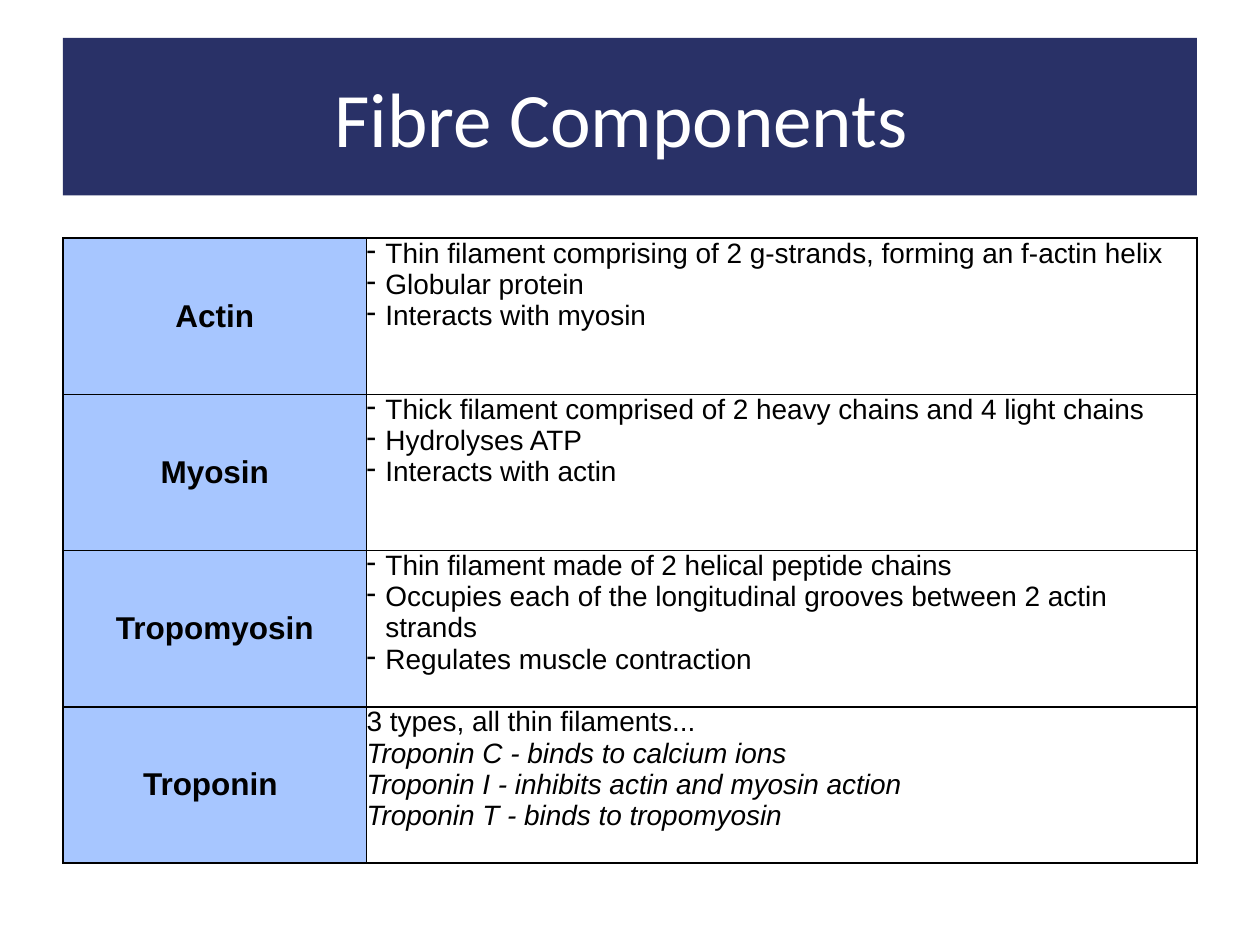
"""Builds a slide with a table of muscle fibre components."""
from dataclasses import dataclass
from typing import Any

from lxml import etree
from pptx import Presentation
from pptx.dml.color import RGBColor
from pptx.enum import shapes, text
from pptx.oxml import ns
from pptx.util import Pt

NAVY = RGBColor(0x29, 0x31, 0x67)
SKY = RGBColor(0xA7, 0xC6, 0xFF)
BLACK = RGBColor(0, 0, 0)
WHITE = RGBColor(0xFF, 0xFF, 0xFF)

LEFT, WIDTH = 36, 648
COLUMN_WIDTHS = (173.5, 474.5)
ROW_HEIGHT = 89.28
HANGING_INDENT = 10.8


@dataclass(frozen=True)
class Line:
    wording: str
    bulleted: bool = True
    italic: bool = False


@dataclass(frozen=True)
class Component:
    name: str
    facts: tuple[Line, ...]


COMPONENTS = (
    Component("Actin", (
        Line("Thin filament comprising of 2 g-strands, forming an f-actin helix"),
        Line("Globular protein"),
        Line("Interacts with myosin"),
    )),
    Component("Myosin", (
        Line("Thick filament comprised of 2 heavy chains and 4 light chains"),
        Line("Hydrolyses ATP"),
        Line("Interacts with actin"),
    )),
    Component("Tropomyosin", (
        Line("Thin filament made of 2 helical peptide chains"),
        Line("Occupies each of the longitudinal grooves between 2 actin strands"),
        Line("Regulates muscle contraction"),
    )),
    Component("Troponin ", (
        Line("3 types, all thin filaments...", bulleted=False),
        Line("Troponin C - binds to calcium ions", bulleted=False, italic=True),
        Line("Troponin I - inhibits actin and myosin action", bulleted=False, italic=True),
        Line("Troponin T - binds to tropomyosin", bulleted=False, italic=True),
    )),
)


def write(paragraph: Any, wording: str, *, size: float, font: str = "Arial",
          color: RGBColor = BLACK, bold: bool = False, italic: bool = False,
          centred: bool = False, bulleted: bool = False) -> None:
    run = paragraph.add_run()
    run.text = wording
    run.font.name, run.font.size = font, Pt(size)
    run.font.bold, run.font.italic = bold, italic
    run.font.color.rgb = color
    paragraph.alignment = text.PP_ALIGN.CENTER if centred else text.PP_ALIGN.LEFT
    if bulleted:
        properties = paragraph._p.get_or_add_pPr()
        properties.set("marL", str(Pt(HANGING_INDENT)))
        properties.set("indent", str(-Pt(HANGING_INDENT)))
        etree.SubElement(properties, ns.qn("a:buChar"), char="-")


def prepare_cell(cell: Any, fill: RGBColor | None, anchor: Any) -> None:
    cell.margin_left = cell.margin_right = cell.margin_top = cell.margin_bottom = 0
    cell.vertical_anchor = anchor
    properties = cell._tc.get_or_add_tcPr()
    for side in ("a:lnL", "a:lnR", "a:lnT", "a:lnB"):
        border = etree.SubElement(properties, ns.qn(side), w=str(Pt(1)))
        solid = etree.SubElement(border, ns.qn("a:solidFill"))
        etree.SubElement(solid, ns.qn("a:srgbClr"), val=str(BLACK))
    if fill is None:
        cell.fill.background()
    else:
        cell.fill.solid()
        cell.fill.fore_color.rgb = fill


def add_banner(slide: Any, heading: str) -> None:
    banner = slide.shapes.add_shape(
        shapes.MSO_SHAPE.RECTANGLE, Pt(LEFT), Pt(21.6), Pt(WIDTH), Pt(90))
    banner.shadow.inherit = False
    banner.fill.solid()
    banner.fill.fore_color.rgb = NAVY
    banner.line.fill.background()
    frame = banner.text_frame
    frame.word_wrap = True
    frame.vertical_anchor = text.MSO_ANCHOR.MIDDLE
    frame.margin_left = frame.margin_right = Pt(7.2)
    frame.margin_top = frame.margin_bottom = Pt(7.2)
    write(frame.paragraphs[0], heading, size=44, font="Calibri", color=WHITE, centred=True)


def add_component_table(slide: Any, components: tuple[Component, ...]) -> None:
    table = slide.shapes.add_table(
        len(components), len(COLUMN_WIDTHS), Pt(LEFT), Pt(136.1), Pt(WIDTH),
        Pt(ROW_HEIGHT * len(components))).table
    table.first_row = table.horz_banding = False
    for column, width in zip(table.columns, COLUMN_WIDTHS):
        column.width = Pt(width)
    for row, component in zip(table.rows, components):
        row.height = Pt(ROW_HEIGHT)
        name_cell, facts_cell = row.cells
        prepare_cell(name_cell, SKY, text.MSO_ANCHOR.MIDDLE)
        write(name_cell.text_frame.paragraphs[0], component.name,
              size=18, bold=True, centred=True)
        prepare_cell(facts_cell, None, text.MSO_ANCHOR.TOP)
        frame = facts_cell.text_frame
        for index, fact in enumerate(component.facts):
            paragraph = frame.add_paragraph() if index else frame.paragraphs[0]
            write(paragraph, fact.wording, size=16,
                  italic=fact.italic, bulleted=fact.bulleted)


def main() -> None:
    deck = Presentation()
    deck.slide_width, deck.slide_height = Pt(720), Pt(540)
    slide = deck.slides.add_slide(deck.slide_layouts[6])
    add_banner(slide, "Fibre Components ")
    add_component_table(slide, COMPONENTS)
    deck.save("out.pptx")


if __name__ == "__main__":
    main()
